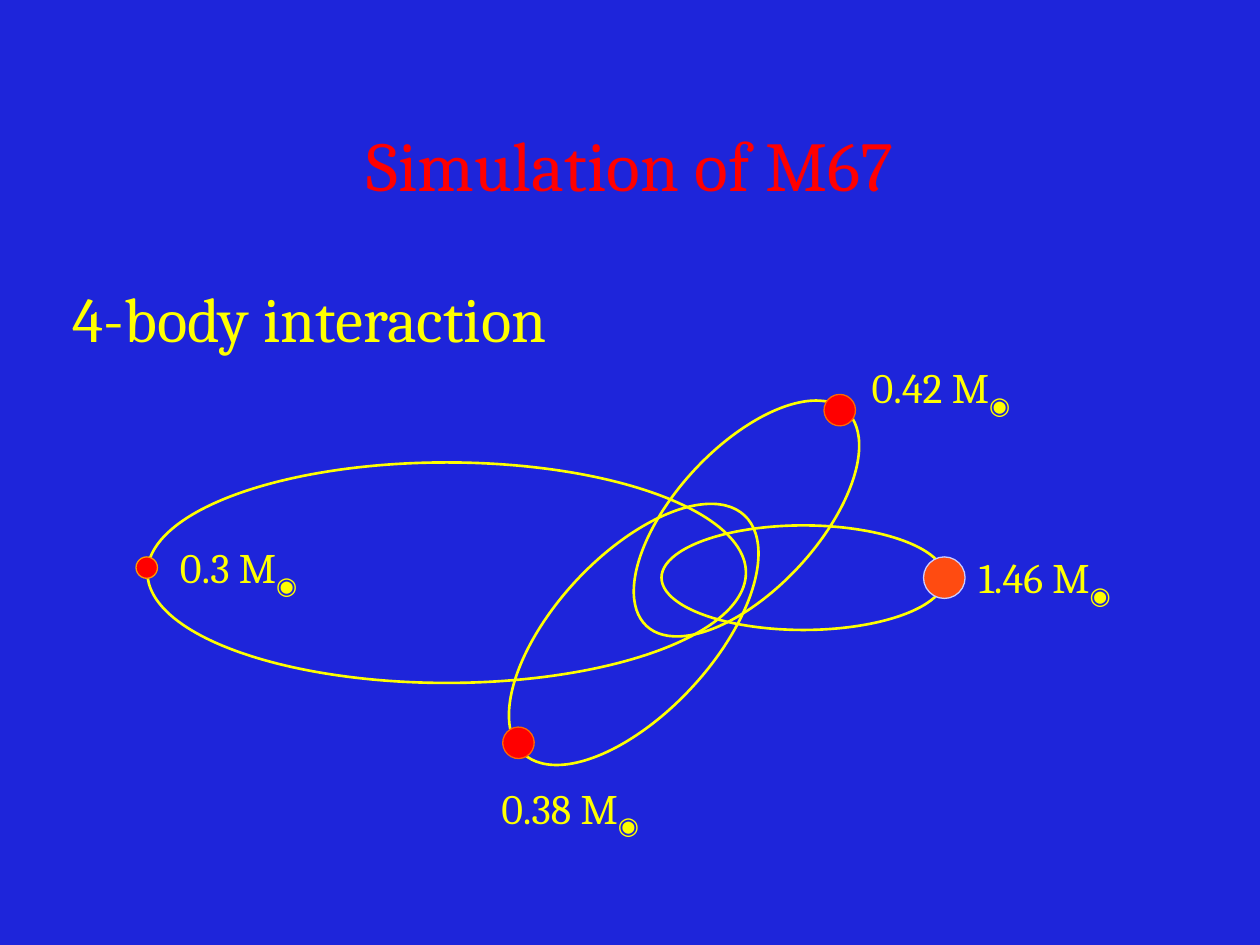
import pptx
import pptx.dml.color
import pptx.enum.shapes
import pptx.enum.text
import pptx.util
from dataclasses import dataclass
from typing import Any, Optional

Inches = pptx.util.Inches
YELLOW = "FFFF00"
RED = "FF0000"
TILT = 312.9


@dataclass
class Oval:
    left: float
    top: float
    width: float
    height: float
    turn: float = 0
    fill: Optional[str] = None
    line: str = YELLOW
    weight: float = 1.5


@dataclass
class Label:
    left: float
    top: float
    width: float
    mass: str


def star(left: float, top: float, size: float, fill: str, line: str,
         turn: float = 0) -> Oval:
    return Oval(left, top, size, size, turn, fill, line, 0.75)


def color(code: str) -> pptx.dml.color.RGBColor:
    return pptx.dml.color.RGBColor.from_string(code)


def write(para: Any, text: str, size: float = 24, tone: str = YELLOW,
          base: int = 0) -> None:
    run = para.add_run()
    run.text = text
    run.font.name = "Cambria"
    run.font.size = pptx.util.Pt(size)
    run.font.color.rgb = color(tone)
    if base:
        run.font._element.set("baseline", str(base * 1000))


def draw_oval(shapes: Any, oval: Oval) -> None:
    shape = shapes.add_shape(
        pptx.enum.shapes.MSO_SHAPE.OVAL, Inches(oval.left), Inches(oval.top),
        Inches(oval.width), Inches(oval.height))
    shape.rotation = oval.turn
    shape.shadow.inherit = False
    if oval.fill:
        shape.fill.solid()
        shape.fill.fore_color.rgb = color(oval.fill)
    else:
        shape.fill.background()
    shape.line.color.rgb = color(oval.line)
    shape.line.width = pptx.util.Pt(oval.weight)


def add_box(shapes: Any, left: float, top: float, width: float,
            height: float) -> Any:
    box = shapes.add_textbox(
        Inches(left), Inches(top), Inches(width), Inches(height))
    box.text_frame.word_wrap = True
    return box.text_frame.paragraphs[0]


def draw_label(shapes: Any, label: Label) -> None:
    para = add_box(shapes, label.left, label.top, label.width, 0.5)
    write(para, f"{label.mass} M")
    write(para, "◉", base=-25)


FLAT = [
    Oval(1.17, 3.67, 4.75, 1.75),
    Oval(5.25, 4.17, 2.25, 0.83),
    star(7.33, 4.42, 0.33, "FF4B11", "CCCCFF"),
    star(1.08, 4.42, 0.17, RED, "FF9900"),
    Label(1.33, 4.25, 1.67, "0.3"),
    Label(7.67, 4.33, 1.83, "1.46"),
]
TILTED = [
    Oval(3.74, 4.41, 2.58, 1.25, TILT),
    Oval(4.76, 3.55, 2.33, 1.13, TILT),
    star(3.99, 5.77, 0.25, RED, "FF6600", TILT),
    star(6.54, 3.13, 0.25, RED, "FF6600", TILT),
    Label(6.82, 2.82, 1.58, "0.42"),
    Label(3.88, 6.16, 1.75, "0.38"),
]


def main() -> None:
    deck = pptx.Presentation()
    deck.slide_width, deck.slide_height = Inches(10), Inches(7.5)
    slide = deck.slides.add_slide(deck.slide_layouts[5])
    slide.background.fill.solid()
    slide.background.fill.fore_color.rgb = color("1E25DA")

    title = slide.shapes.title
    title.left, title.top = Inches(0.75), Inches(0.67)
    title.width, title.height = Inches(8.5), Inches(1.25)
    title.text_frame.vertical_anchor = pptx.enum.text.MSO_ANCHOR.MIDDLE
    para = title.text_frame.paragraphs[0]
    para.alignment = pptx.enum.text.PP_ALIGN.CENTER
    write(para, "Simulation of M67", size=40, tone=RED)

    for parts in (FLAT, TILTED):
        group = slide.shapes.add_group_shape()
        for part in parts:
            if isinstance(part, Oval):
                draw_oval(group.shapes, part)
            else:
                draw_label(group.shapes, part)

    head = add_box(slide.shapes, 0.48, 2.17, 4.83, 0.7)
    write(head, "4-body interaction", size=36)
    deck.save("out.pptx")


if __name__ == "__main__":
    main()
